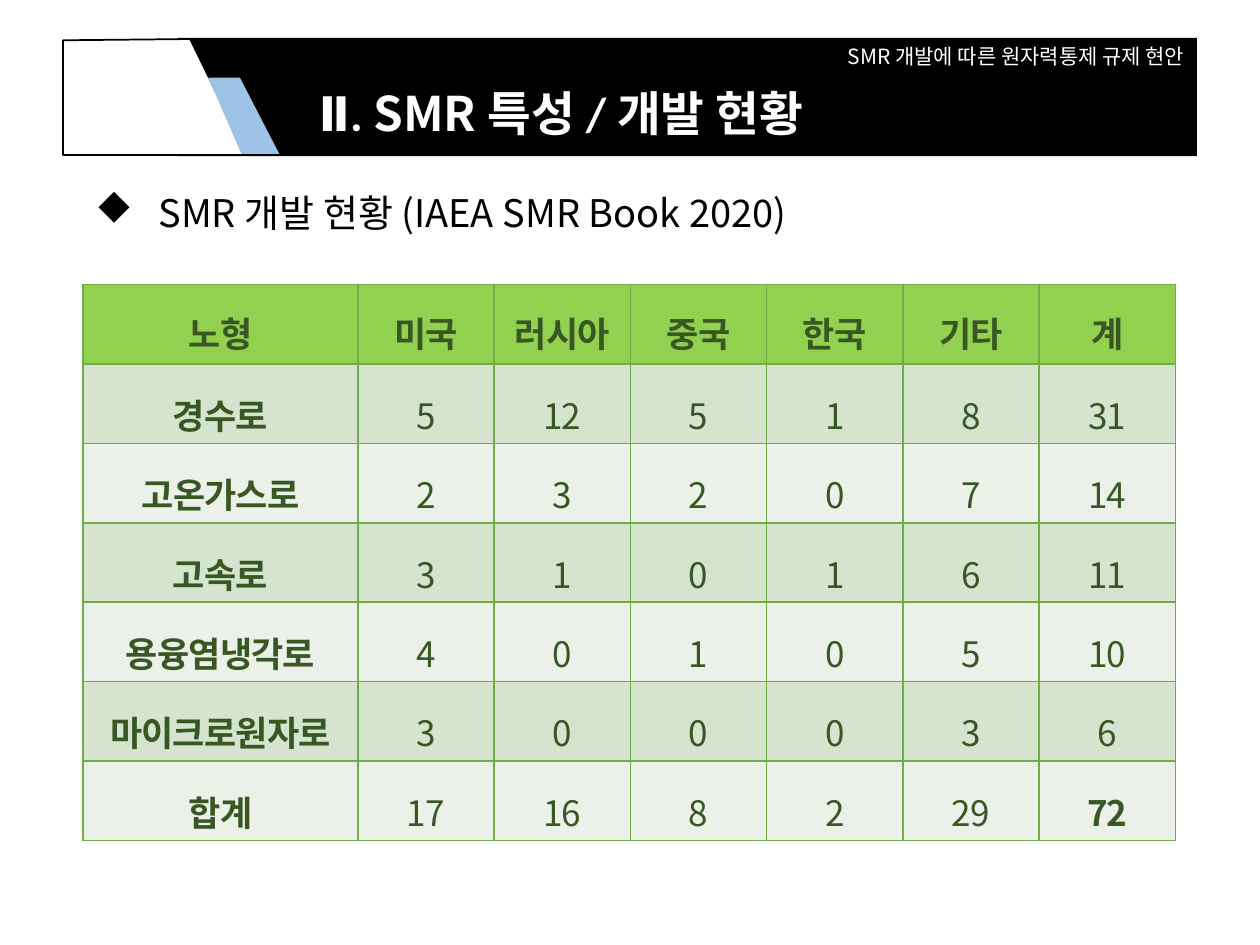
from lxml import etree
from pptx import Presentation
from pptx import util as u
from pptx.dml.color import RGBColor
from pptx.enum import shapes, text
from pptx.oxml.ns import qn

# Content
RUNNING_HEAD = "SMR 개발에 따른 원자력통제 규제 현안"
TITLE = [("Ⅱ. ", "latin"), ("SMR ", "font"), ("특성 / 개발 현황", "latin")]
BULLET = "SMR 개발 현황 (IAEA SMR Book 2020)"
ROWS = [
    ("노형", "미국", "러시아", "중국", "한국", "기타", "계"),
    ("경수로", 5, 12, 5, 1, 8, 31),
    ("고온가스로", 2, 3, 2, 0, 7, 14),
    ("고속로", 3, 1, 0, 1, 6, 11),
    ("용융염냉각로", 4, 0, 1, 0, 5, 10),
    ("마이크로원자로", 3, 0, 0, 0, 3, 6),
    ("합계", 17, 16, 8, 2, 29, 72),
]
WHITE_PANEL = [(1.5, 0.31), (0.5, 0.32), (0.5, 1.23), (1.95, 1.23)]
BLUE_STRIPE = [(1.65, 0.61), (1.91, 0.61), (2.23, 1.23), (1.92, 1.23)]
TABLE_BOX = (0.66, 2.26, 8.67, 4.41)
FIRST_COL = 2.18

THEME = {
    "font": "Noto Sans CJK KR", "latin": "Calibri", "symbol": "Wingdings",
    "black": "000000", "white": "FFFFFF", "stripe": "9DC3E6",
    "head": "92D050", "bands": ("D5E3CF", "EBF1E9"),
    "ink": "385723", "rule": "70AD47",
    "small": 12, "title": 27.2, "bullet": 21.7, "cell": 20,
}
MIDDLE, TOP = text.MSO_ANCHOR.MIDDLE, text.MSO_ANCHOR.TOP


def rgb(value):
    return RGBColor.from_string(value)


def apply(obj, formats):
    for name, value in formats.items():
        setattr(obj, name, value)


def add_run(p, words, size, color, face="font", bold=False):
    r = p.add_run()
    r.text = words
    apply(r.font, {"size": u.Pt(size), "bold": bold, "name": THEME[face]})
    r.font.color.rgb = rgb(color)
    rPr = r.font._element
    rPr.find(qn("a:latin")).addnext(
        etree.Element(qn("a:ea"), typeface=THEME["font"]))
    return rPr


def add_text_box(s, left, top, width, height, anchor):
    tf = s.shapes.add_textbox(*map(u.Inches, (left, top, width, height))).text_frame
    apply(tf, {"word_wrap": True, "vertical_anchor": anchor})
    return tf.paragraphs[0]


def add_outline(s, points, fill):
    start, *rest = [(u.Inches(x), u.Inches(y)) for x, y in points]
    fb = s.shapes.build_freeform(*start)
    fb.add_line_segments(rest, close=False)
    sp = fb.convert_to_shape()
    sp.shadow.inherit = False
    sp.fill.solid()
    sp.fill.fore_color.rgb = rgb(fill)
    sp.line.color.rgb = rgb(THEME["black"])
    sp.line.width = u.Pt(1)


def add_borders(cell):
    tcPr = cell._tc.get_or_add_tcPr()
    for i, side in enumerate(("lnL", "lnR", "lnT", "lnB")):
        ln = etree.Element(qn("a:" + side), w=str(u.Pt(1)))
        fill = etree.SubElement(ln, qn("a:solidFill"))
        etree.SubElement(fill, qn("a:srgbClr"), val=THEME["rule"])
        tcPr.insert(i, ln)


def add_header(s):
    # Black band with the running head
    sp = s.shapes.add_shape(shapes.MSO_SHAPE.RECTANGLE,
                            *map(u.Inches, (1.41, 0.3, 8.09, 0.94)))
    sp.shadow.inherit = False
    sp.fill.solid()
    sp.fill.fore_color.rgb = rgb(THEME["black"])
    sp.line.fill.background()
    sp.text_frame.vertical_anchor = TOP
    p = sp.text_frame.paragraphs[0]
    p.alignment = text.PP_ALIGN.RIGHT
    add_run(p, RUNNING_HEAD, THEME["small"], THEME["white"])

    # Slanted panels
    add_outline(s, WHITE_PANEL, THEME["white"])
    add_outline(s, BLUE_STRIPE, THEME["stripe"])

    # Title
    p = add_text_box(s, 2.43, 0.62, 6.84, 0.48, TOP)
    for words, face in TITLE:
        add_run(p, words, THEME["title"], THEME["white"], face, bold=True)


def add_table(s):
    last_row, last_col = len(ROWS) - 1, len(ROWS[0]) - 1
    table = s.shapes.add_table(len(ROWS), len(ROWS[0]),
                               *map(u.Inches, TABLE_BOX)).table
    number_col = (TABLE_BOX[2] - FIRST_COL) / last_col
    for c, col in enumerate(table.columns):
        col.width = u.Inches(number_col if c else FIRST_COL)
    for i, values in enumerate(ROWS):
        table.rows[i].height = u.Inches(TABLE_BOX[3] / len(ROWS))
        for c, value in enumerate(values):
            cell = table.cell(i, c)
            apply(cell, {"vertical_anchor": MIDDLE,
                         "margin_left": u.Inches(0.07), "margin_right": u.Inches(0.07),
                         "margin_top": u.Inches(0.02), "margin_bottom": u.Inches(0.02)})
            cell.fill.solid()
            cell.fill.fore_color.rgb = rgb(THEME["bands"][(i - 1) % 2] if i else THEME["head"])
            add_borders(cell)
            p = cell.text_frame.paragraphs[0]
            apply(p, {"alignment": text.PP_ALIGN.CENTER, "line_spacing": 1.4 if i else 1.3})
            bold = i == 0 or c == 0 or (i, c) == (last_row, last_col)
            rPr = add_run(p, str(value), THEME["cell"], THEME["ink"], bold=bold)
            rPr.set("spc", "-50")


def add_bullet(s):
    p = add_text_box(s, 0.66, 1.44, 8.67, 0.49, MIDDLE)
    pPr = p._p.get_or_add_pPr()
    pPr.set("marL", str(u.Inches(0.5)))
    pPr.set("indent", str(-u.Inches(0.5)))
    # "u" is the black diamond of the symbol font
    etree.SubElement(pPr, qn("a:buFont"), typeface=THEME["symbol"], charset="2")
    etree.SubElement(pPr, qn("a:buChar"), char="u")
    add_run(p, BULLET, THEME["bullet"], THEME["black"])


def main():
    prs = Presentation()
    apply(prs, {"slide_width": u.Inches(10), "slide_height": u.Inches(7.5)})
    s = prs.slides.add_slide(prs.slide_layouts[6])
    add_header(s)
    add_table(s)
    add_bullet(s)
    prs.save("out.pptx")


if __name__ == "__main__":
    main()
